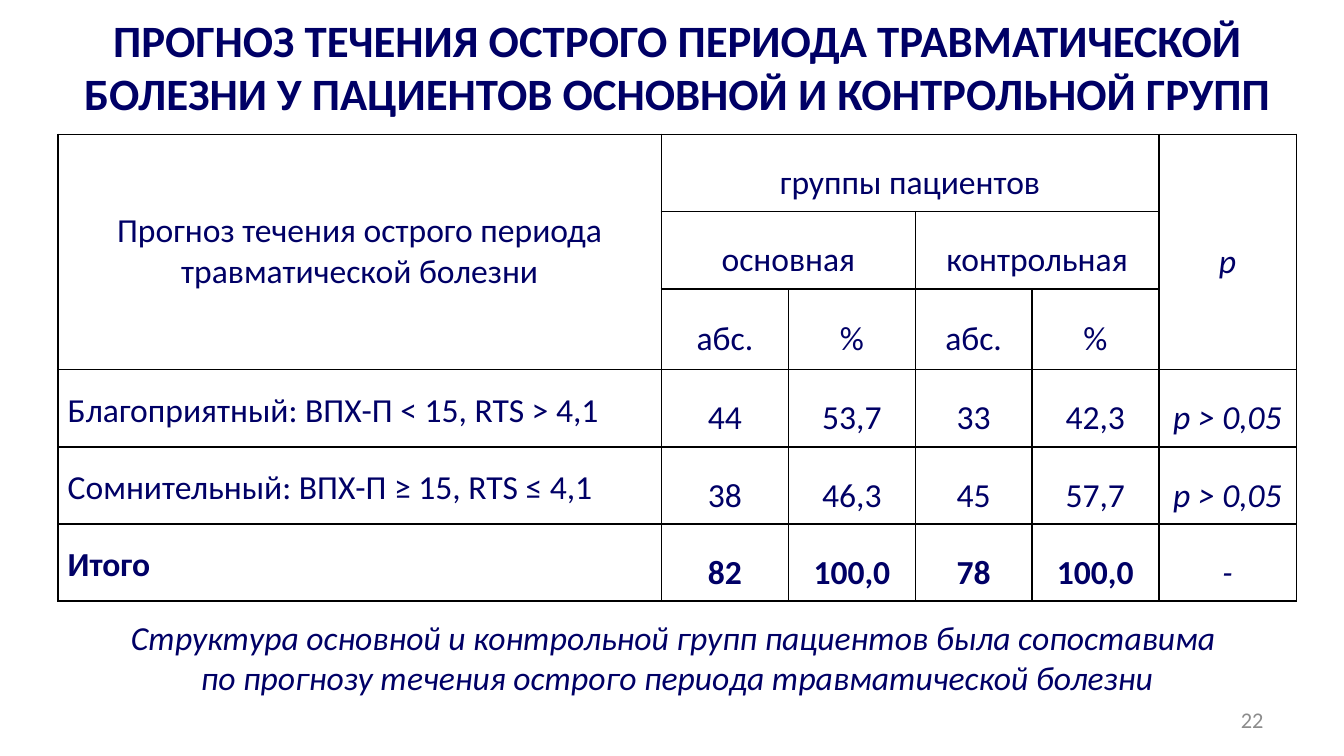
from lxml import etree
from pptx import Presentation
from pptx import util as u
from pptx.dml.color import RGBColor
from pptx.enum import text
from pptx.oxml import ns

NAVY = RGBColor(0x00, 0x00, 0x66)
GREY = RGBColor(0x8C, 0x8C, 0x8C)
BORDER = RGBColor(0x00, 0x00, 0x00)
FONT = "Calibri"
ALIGN = text.PP_ALIGN
MIDDLE, TOP = text.MSO_ANCHOR.MIDDLE, text.MSO_ANCHOR.TOP

# Content
TITLE = ["ПРОГНОЗ ТЕЧЕНИЯ ОСТРОГО ПЕРИОДА ТРАВМАТИЧЕСКОЙ "
         "БОЛЕЗНИ У ПАЦИЕНТОВ ОСНОВНОЙ И КОНТРОЛЬНОЙ ГРУПП"]
CONCLUSION = ["Структура основной и контрольной групп пациентов была сопоставима ",
              "по прогнозу течения острого периода травматической болезни"]
PAGE_NUMBER = ["22"]
ROWS = [
    ["Прогноз течения острого периода травматической болезни",
     "группы пациентов", "", "", "", "p"],
    ["", "основная", "", "контрольная", "", ""],
    ["", "абс.", "%", "абс.", "%", ""],
    ["Благоприятный: ВПХ-П < 15, RTS > 4,1", "44", "53,7", "33", "42,3", "p > 0,05"],
    ["Сомнительный: ВПХ-П ≥ 15, RTS ≤ 4,1", "38", "46,3", "45", "57,7", "p > 0,05"],
    ["Итого", "82", "100,0", "78", "100,0", "-"],
]
HEADER_ROWS = 3
MERGES = [((0, 0), (2, 0)), ((0, 1), (0, 4)), ((0, 5), (2, 5)),
          ((1, 1), (1, 2)), ((1, 3), (1, 4))]
COLUMN_WIDTHS = [11.4, 2.4, 2.4, 2.2, 2.4, 2.6]
ROW_HEIGHT = 1.46
LEFT, TABLE_TOP = 1.1, 2.54


def write(para, lines, size, color=NAVY, align=ALIGN.CENTER, bold=False, italic=False):
    para.alignment = align
    for number, line in enumerate(lines):
        if number:
            para.add_line_break()
        span = para.add_run()
        span.text = line
        span.font.name, span.font.size = FONT, u.Pt(size)
        span.font.bold, span.font.italic = bold, italic
        span.font.color.rgb = color


def add_text(page, area, lines, size, anchor=MIDDLE, inset=None, **style):
    box = page.shapes.add_textbox(*map(u.Cm, area))
    frame = box.text_frame
    frame.word_wrap = True
    frame.vertical_anchor = anchor
    if inset is not None:
        frame.margin_left = frame.margin_right = u.Cm(inset)
        frame.margin_top = frame.margin_bottom = u.Cm(inset)
    write(frame.paragraphs[0], lines, size, **style)


def add_borders(cell):
    properties = cell._tc.get_or_add_tcPr()
    for position, side in enumerate(("lnL", "lnR", "lnT", "lnB")):
        line = etree.Element(ns.qn(f"a:{side}"), w=str(u.Pt(1)))
        fill = etree.SubElement(line, ns.qn("a:solidFill"))
        etree.SubElement(fill, ns.qn("a:srgbClr"), val=str(BORDER))
        properties.insert(position, line)


def add_forecast_table(page):
    table = page.shapes.add_table(
        len(ROWS), len(COLUMN_WIDTHS), u.Cm(LEFT), u.Cm(TABLE_TOP),
        u.Cm(sum(COLUMN_WIDTHS)), u.Cm(ROW_HEIGHT * len(ROWS))).table
    table.first_row = table.horz_banding = False
    for column, width in zip(table.columns, COLUMN_WIDTHS):
        column.width = u.Cm(width)
    for row in table.rows:
        row.height = u.Cm(ROW_HEIGHT)
    for start, end in MERGES:
        table.cell(*start).merge(table.cell(*end))

    last_row, last_column = len(ROWS) - 1, len(COLUMN_WIDTHS) - 1
    for r, values in enumerate(ROWS):
        for c, value in enumerate(values):
            cell = table.cell(r, c)
            cell.fill.background()
            add_borders(cell)
            cell.margin_left = cell.margin_right = u.Cm(0.18)
            cell.margin_top = cell.margin_bottom = 0
            row_label = c == 0 and r >= HEADER_ROWS
            cell.vertical_anchor = TOP if row_label else MIDDLE
            if not value:
                continue
            para = cell.text_frame.paragraphs[0]
            para.line_spacing = 1.0 if (r, c) == (0, 0) else 1.5
            write(para, [value], 18,
                  align=ALIGN.JUSTIFY if row_label else ALIGN.CENTER,
                  bold=r == last_row and c < last_column,
                  italic=c == last_column)


def main():
    deck = Presentation()
    deck.slide_width, deck.slide_height = u.Cm(25.4), u.Cm(14.29)
    page = deck.slides.add_slide(deck.slide_layouts[6])

    # Heading, table, conclusion and page number
    add_text(page, (0.9, 0.15, 23.8, 2.2), TITLE, 24, inset=0.1, bold=True)
    add_forecast_table(page)
    add_text(page, (LEFT, 11.53, sum(COLUMN_WIDTHS), 1.8), CONCLUSION, 18,
             anchor=TOP, italic=True)
    add_text(page, (18.2, 13.23, 5.93, 0.76), PAGE_NUMBER, 12,
             color=GREY, align=ALIGN.RIGHT)
    deck.save("out.pptx")


if __name__ == "__main__":
    main()
